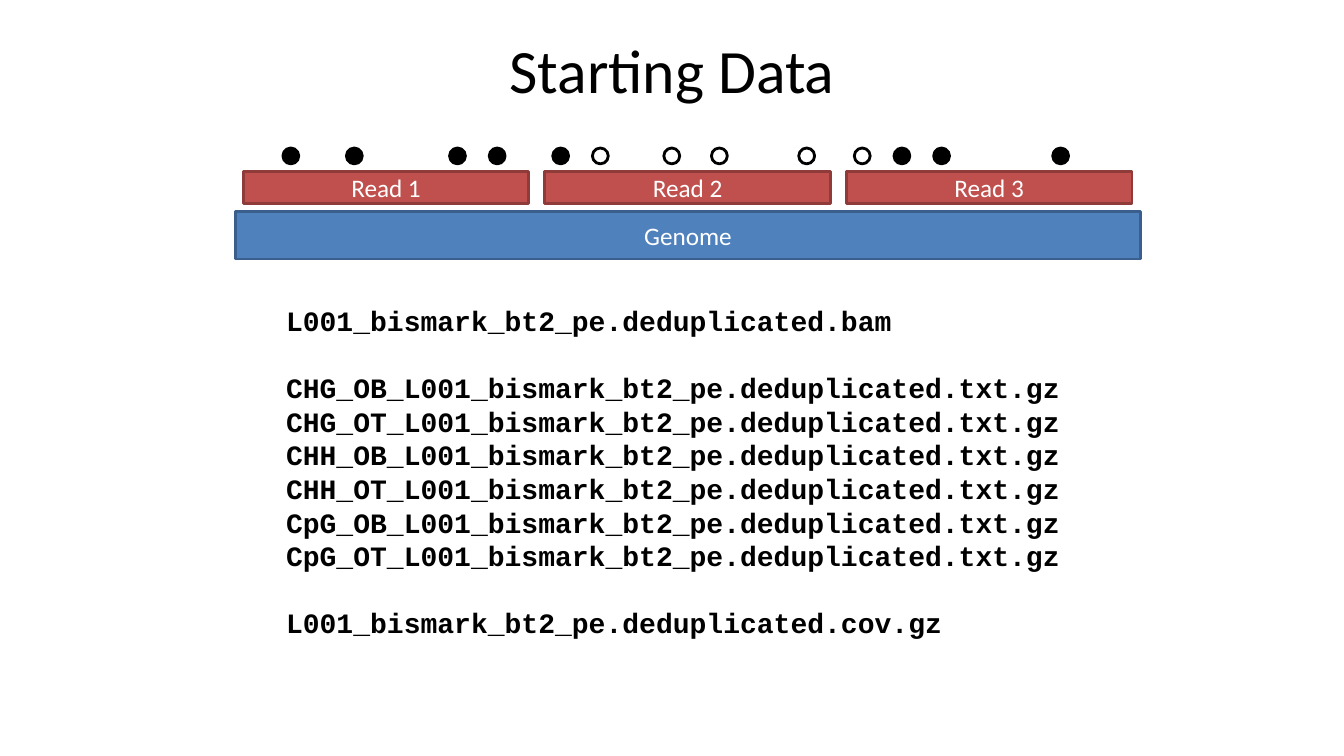
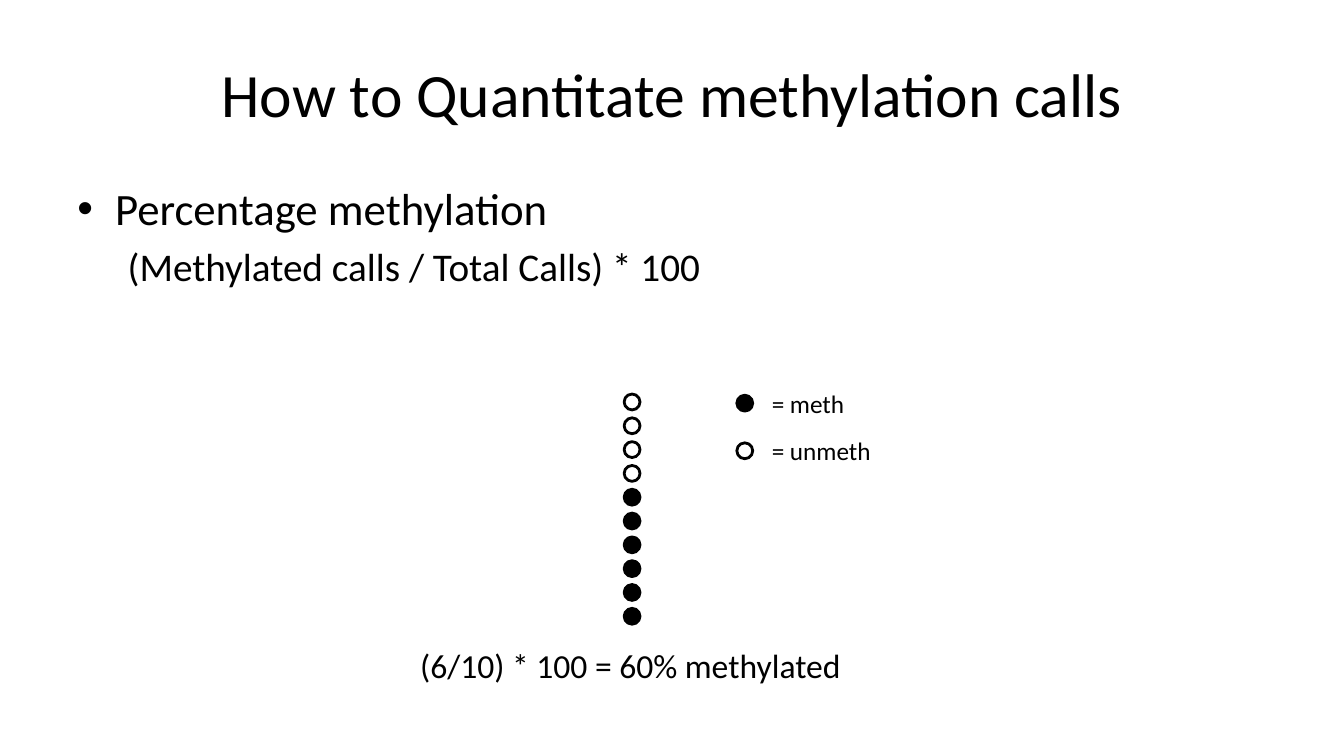
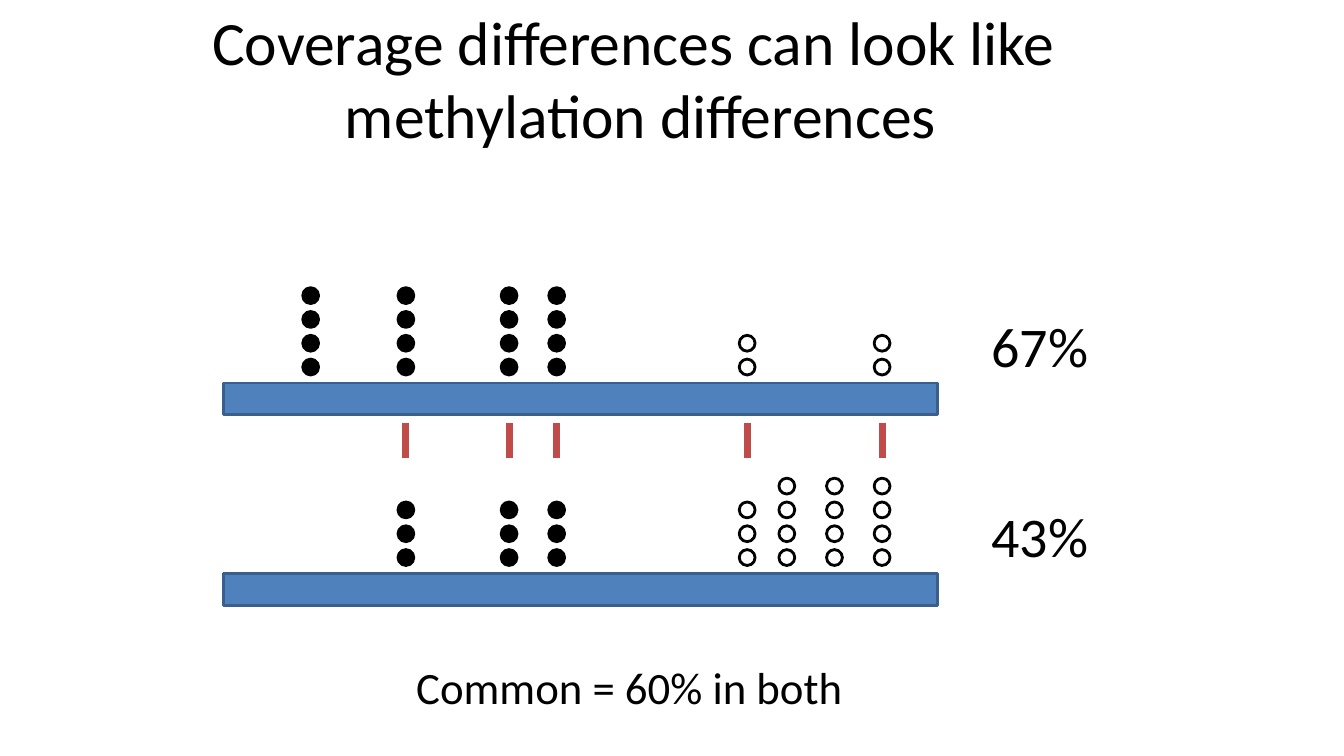
from dataclasses import dataclass

import lxml.etree
import pptx
import pptx.dml.color
import pptx.enum.shapes
import pptx.enum.text
import pptx.oxml.ns
import pptx.util

Cm = pptx.util.Cm
Pt = pptx.util.Pt
SHAPE = pptx.enum.shapes.MSO_SHAPE
ALIGN = pptx.enum.text.PP_ALIGN
ANCHOR = pptx.enum.text.MSO_ANCHOR
FIT = pptx.enum.text.MSO_AUTO_SIZE


@dataclass(frozen=True)
class Theme:
    font: str = "Calibri"
    code_font: str = "Courier New"
    black: str = "000000"
    white: str = "FFFFFF"
    blue: str = "4F81BD"
    blue_edge: str = "3A5F8C"
    red: str = "C0504D"
    red_edge: str = "8E3B39"
    mark: str = "BF4C48"
    title: int = 44
    percent: int = 40
    body: int = 32
    formula: int = 28
    result: int = 24
    code: int = 20
    label: int = 18
    edge: int = 2
    mark_width: int = 5


T = Theme()
DOT = 0.4
DOT_STEP = 0.6


def rgb(color):
    return pptx.dml.color.RGBColor.from_string(color)


def format_runs(p, size, color=T.black, font=T.font, bold=False):
    for r in p.runs:
        r.font.size = Pt(size)
        r.font.name = font
        r.font.bold = bold
        r.font.color.rgb = rgb(color)


def add_box(s, left, top, width, height):
    tf = s.shapes.add_textbox(Cm(left), Cm(top), Cm(width), Cm(height)).text_frame
    tf.word_wrap = True
    return tf


def add_title(s, text, left, top, width=22.86):
    tf = add_box(s, left, top, width, 3.18)
    tf.vertical_anchor = ANCHOR.MIDDLE
    p = tf.paragraphs[0]
    p.text = text
    p.alignment = ALIGN.CENTER
    format_runs(p, T.title)


def add_label(s, text, left, top, width, height, size):
    """Add one unwrapped line of text."""
    tf = add_box(s, left, top, width, height)
    tf.word_wrap = False
    tf.auto_size = FIT.SHAPE_TO_FIT_TEXT
    tf.text = text
    format_runs(tf.paragraphs[0], size)


def add_code(s, groups, left, top, width, height):
    """Add lines of code, with one line of space between groups."""
    tf = add_box(s, left, top, width, height)
    tf.word_wrap = False
    line_height = Pt(T.code * 1.2)
    p = None
    for group in groups:
        for i, line in enumerate(group):
            is_first = p is None
            p = tf.paragraphs[0] if is_first else tf.add_paragraph()
            p.text = line
            p.line_spacing = line_height
            if i == 0 and not is_first:
                p.space_before = line_height
            format_runs(p, T.code, font=T.code_font, bold=True)


def set_indent(p, margin, indent=0, bullet=None):
    pPr = p._p.get_or_add_pPr()
    pPr.set("marL", str(Cm(margin)))
    pPr.set("indent", str(Cm(indent)))
    if bullet:
        qn = pptx.oxml.ns.qn
        lxml.etree.SubElement(pPr, qn("a:buFont")).set("typeface", "Arial")
        lxml.etree.SubElement(pPr, qn("a:buChar")).set("char", bullet)


def add_shape(s, kind, left, top, width, height, fill, edge):
    sp = s.shapes.add_shape(kind, Cm(left), Cm(top), Cm(width), Cm(height))
    sp.shadow.inherit = False
    sp.fill.solid()
    sp.fill.fore_color.rgb = rgb(fill)
    sp.line.color.rgb = rgb(edge)
    sp.line.width = Pt(T.edge)
    return sp


def add_bar(s, left, top, width, height, fill, edge, text=""):
    tf = add_shape(s, SHAPE.RECTANGLE, left, top, width, height, fill, edge).text_frame
    if text:
        tf.text = text
        tf.vertical_anchor = ANCHOR.MIDDLE
        tf.paragraphs[0].alignment = ALIGN.CENTER
        format_runs(tf.paragraphs[0], T.label, T.white)


def add_dot(s, left, top, methylated):
    fill = T.black if methylated else T.white
    add_shape(s, SHAPE.OVAL, left, top, DOT, DOT, fill, T.black)


def add_stack(s, left, bottom_dot, calls):
    """Stack dots upwards; calls holds one truth value per dot."""
    for i, methylated in enumerate(calls):
        add_dot(s, left, bottom_dot - i * DOT_STEP, methylated)


def add_mark(s, x, top, length):
    line = s.shapes.add_connector(pptx.enum.shapes.MSO_CONNECTOR.STRAIGHT,
                                  Cm(x), Cm(top), Cm(x), Cm(top + length))
    line.line.color.rgb = rgb(T.mark)
    line.line.width = Pt(T.mark_width)
    lxml.etree.SubElement(line._element.spPr, pptx.oxml.ns.qn("a:effectLst"))


def starting_data(s):
    add_title(s, "Starting Data", 5.51, 0.15)
    add_bar(s, 5.94, 5.33, 22.8, 1.2, T.blue, T.blue_edge, "Genome")
    for i in range(3):
        add_bar(s, 6.13 + i * 7.6, 4.32, 7.2, 0.8, T.red, T.red_edge, f"Read {i + 1}")
    for offset in (0, 1.6, 4.2, 5.2, 6.8, 15.4, 16.4, 19.4):
        add_dot(s, 7.13 + offset, 3.73, True)
    for offset in (7.8, 9.6, 10.8, 13, 14.4):
        add_dot(s, 7.13 + offset, 3.73, False)
    name = "L001_bismark_bt2_pe.deduplicated"
    calls = [f"{context}_{strand}_{name}.txt.gz"
             for context in ("CHG", "CHH", "CpG") for strand in ("OB", "OT")]
    add_code(s, [[f"{name}.bam"], calls, [f"{name}.cov.gz"]], 6.96, 7.52, 20.17, 8.81)


def quantitation(s):
    add_title(s, "How to Quantitate methylation calls", 1.7, 0.76, 30.48)
    tf = add_box(s, 1.7, 4.44, 30.48, 12.57)
    p = tf.paragraphs[0]
    p.text = "Percentage methylation"
    set_indent(p, 0.95, -0.95, "•")
    format_runs(p, T.body)
    p = tf.add_paragraph()
    p.text = "(Methylated calls / Total Calls) * 100"
    p.level = 1
    p.space_before = Pt(T.formula * 0.2)
    set_indent(p, 1.27)
    format_runs(p, T.formula)

    add_stack(s, 15.73, 15.33, [True] * 6 + [False] * 4)
    legend = (("= meth", True, 2.36), ("= unmeth", False, 3.05))
    for i, (text, methylated, width) in enumerate(legend):
        top = 9.65 + i * 1.2
        add_dot(s, 18.57, top + 0.31, methylated)
        add_label(s, text, 19.2, top, width, 1.02, T.label)
    add_label(s, "(6/10) * 100 = 60% methylated", 10.34, 16.13, 11.2, 1.27, T.result)


def coverage(s):
    add_title(s, "Coverage differences can look like \vmethylation differences", 4.72, 0.36)
    bar_left, bar_top, bar_height, gap = 5.63, 9.65, 0.8, 0.2
    # Offset along the bar, methylated, calls in the upper and lower sample
    positions = ((2, True, 4, 0), (4.4, True, 4, 3), (7, True, 4, 3), (8.2, True, 4, 3),
                 (13, False, 2, 3), (14, False, 0, 4), (15.2, False, 0, 4),
                 (16.4, False, 2, 4))
    for i, percent in enumerate(("67%", "43%")):
        top = bar_top + i * 4.8
        add_bar(s, bar_left, top, 18, bar_height, T.blue, T.blue_edge)
        for offset, methylated, *counts in positions:
            add_stack(s, bar_left + offset, top - DOT_STEP, [methylated] * counts[i])
        add_label(s, percent, 24.74, top - 1.93, 2.97, 1.95, T.percent)
    for offset, _, upper, lower in positions:
        if upper and lower:
            add_mark(s, bar_left + offset + DOT / 2, bar_top + bar_height + gap, 0.88)
    add_label(s, "Common = 60% in both", 10.24, 16.51, 11.38, 1.63, T.body)


def main():
    prs = pptx.Presentation()
    prs.slide_width = Cm(33.87)
    prs.slide_height = Cm(19.05)
    for build in (starting_data, quantitation, coverage):
        build(prs.slides.add_slide(prs.slide_layouts[6]))
    prs.save("out.pptx")


if __name__ == "__main__":
    main()
